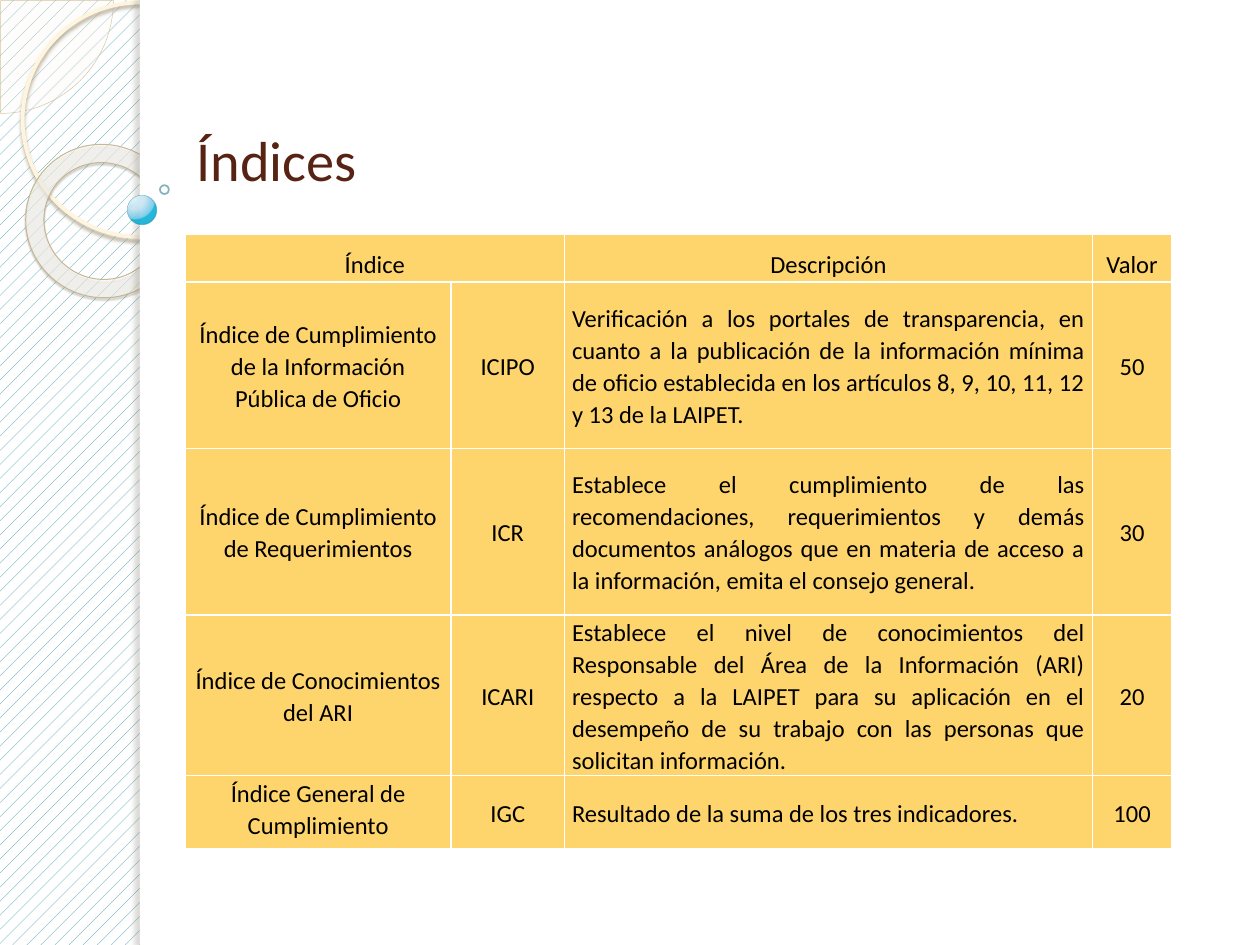
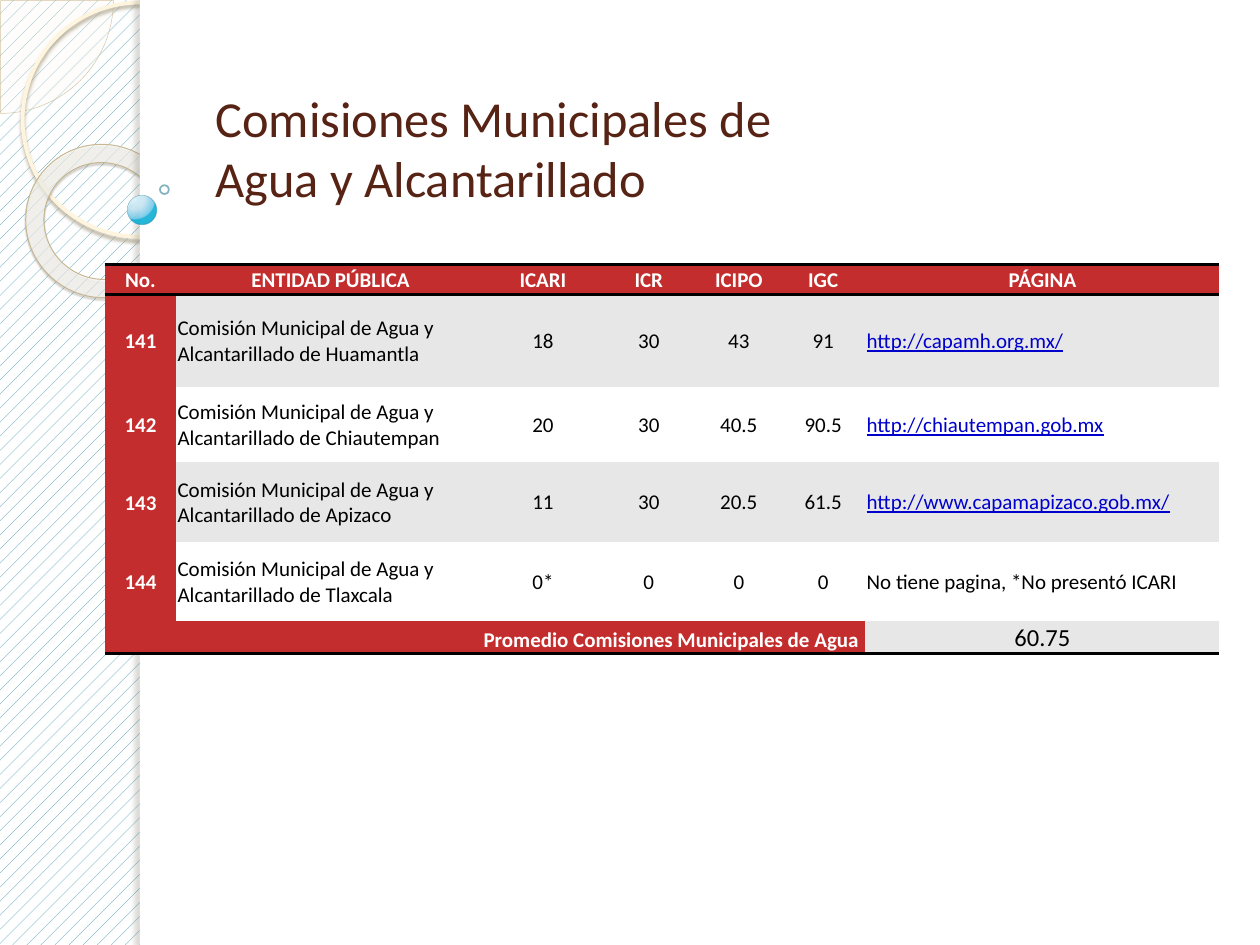
from lxml.etree import SubElement, Element
from pptx import Presentation
from pptx.dml.color import RGBColor
from pptx.enum.dml import MSO_PATTERN
from pptx.enum.shapes import MSO_SHAPE as SHAPE
from pptx.enum.text import MSO_ANCHOR as ANCHOR, MSO_AUTO_SIZE, PP_ALIGN as ALIGN
from pptx.oxml.ns import qn
from pptx.util import Inches, Pt

FONT = "Calibri"
C = {
    "white": "FFFFFF", "black": "000000", "title": "572314", "hatch": "3891A7",
    "gold": "FED46C", "red": "C32D2E", "grey": "E7E7E7", "link": "0000CC",
    "pie": "FEFAF4", "pie_line": "D3C39F", "ring": "FFF5DE", "ring_shadow": "B0A68F",
    "donut_line": "C7B893", "donut_shadow": "5A5444", "band_shadow": "736F63",
    "ball_line": "308EA5", "dot_line": "318093",
}
# Gradients: stops as (position, colour, opacity), then the focus rectangle, in percent
DONUT_GRAD = ([(0, "FFFCF6", 70), (70, "FFFEFB", 55), (100, "F0D28E", 60)],
              (-408, -50, 508, 150))
BALL_GRAD = ([(0, "DAF4FF", 95), (50, "C3E3F0", 90), (95, "6BC7E8", 88), (100, "00ABD5", 85)],
             (25, 12, 75, 88))
NO_STYLE = "{2D5ABB26-0587-4C30-8999-92F81FD0307C}"

INDEX_ROWS = [
    ("Índice", "", "Descripción", "Valor"),
    ("Índice de Cumplimiento de la Información Pública de Oficio", "ICIPO",
     "Verificación a los portales de transparencia, en cuanto a la publicación de la "
     "información mínima de oficio establecida en los artículos 8, 9, 10, 11, 12 y 13 "
     "de la LAIPET.", "50"),
    ("Índice de Cumplimiento de Requerimientos", "ICR",
     "Establece el cumplimiento de las recomendaciones, requerimientos y demás documentos "
     "análogos que en materia de acceso a la información, emita el consejo general.", "30"),
    ("Índice de Conocimientos del ARI", "ICARI",
     "Establece el nivel de conocimientos del Responsable del Área de la Información (ARI) "
     "respecto a la LAIPET para su aplicación en el desempeño de su trabajo con las "
     "personas que solicitan información.", "20"),
    ("Índice General de Cumplimiento", "IGC",
     "Resultado de la suma de los tres indicadores.", "100"),
]
SCORE_HEADS = ("No.", "ENTIDAD PÚBLICA", "ICARI", "ICR", "ICIPO", "IGC", "PÁGINA")
SCORES = [
    ("141", "Huamantla", "18", "30", "43", "91", "http://capamh.org.mx/"),
    ("142", "Chiautempan", "20", "30", "40.5", "90.5", "http://chiautempan.gob.mx"),
    ("143", "Apizaco", "11", "30", "20.5", "61.5", "http://www.capamapizaco.gob.mx/"),
    ("144", "Tlaxcala", "0*", "0", "0", "0", "No tiene pagina, *No presentó ICARI"),
]


def rgb(name):
    return RGBColor.from_string(C[name])


def apply(obj, fmt):
    for name, value in fmt.items():
        setattr(obj, name, value)


def add_color(parent, color, opacity=100):
    clr = SubElement(parent, qn("a:srgbClr"), val=color)
    SubElement(clr, qn("a:alpha"), val=str(opacity * 1000))


def set_gradient(s, stops, focus):
    grad = Element(qn("a:gradFill"), rotWithShape="1")
    gs_lst = SubElement(grad, qn("a:gsLst"))
    for pos, color, opacity in stops:
        add_color(SubElement(gs_lst, qn("a:gs"), pos=str(pos * 1000)), color, opacity)
    circle = SubElement(grad, qn("a:path"), path="circle")
    SubElement(circle, qn("a:fillToRect"),
               **{side: str(v * 1000) for side, v in zip("ltrb", focus)})
    sp_pr = s.element.spPr
    sp_pr.replace(sp_pr.find(qn("a:noFill")), grad)


def set_shadow(s, color, opacity, blur, dist, angle):
    effects = s.element.spPr.find(qn("a:effectLst"))
    shadow = SubElement(effects, qn("a:outerShdw"), blurRad=str(Pt(blur)), dist=str(Pt(dist)),
                        dir=str(angle * 60000), algn="tl", rotWithShape="0")
    add_color(shadow, C[color], opacity)


def set_opacity(part, opacity):
    for clr in part.iter(qn("a:srgbClr")):
        SubElement(clr, qn("a:alpha"), val=str(opacity * 1000))


def add_decor(slide, kind, box, fill=None, opacity=None, gradient=None,
              line=None, line_opacity=None, shadow=None):
    s = slide.shapes.add_shape(kind, *map(Inches, box))
    s.shadow.inherit = False
    if fill:
        s.fill.solid()
        s.fill.fore_color.rgb = rgb(fill)
    else:
        s.fill.background()
    if opacity:
        set_opacity(s.element.spPr.find(qn("a:solidFill")), opacity)
    if gradient:
        set_gradient(s, *gradient)
    if line:
        s.line.color.rgb = rgb(line[0])
        s.line.width = Pt(line[1])
    else:
        s.line.fill.background()
    if line_opacity:
        set_opacity(s.element.spPr.find(qn("a:ln")), line_opacity)
    if shadow:
        set_shadow(s, *shadow)
    return s


def build_master(prs, slide):
    """Draw the side decoration and move it to the master, behind its placeholders."""
    master = prs.slide_master
    fill = master.background.fill
    fill.patterned()
    fill.pattern = MSO_PATTERN.PERCENT_10
    fill.fore_color.rgb = rgb("hatch")
    fill.back_color.rgb = rgb("white")

    pie = add_decor(slide, SHAPE.PIE, (-0.89, -0.89, 1.79, 1.79), "pie", 33,
                    line=("pie_line", 0.25))
    pie.adjustments[0], pie.adjustments[1] = 0, 54
    ring = add_decor(slide, SHAPE.OVAL, (0.18, 0.02, 1.86, 1.86), line=("ring", 2.15),
                     shadow=("ring_shadow", 85, 2, 2, 90))
    donut = add_decor(slide, SHAPE.DONUT, (0.2, 1.15, 1.23, 1.21), gradient=DONUT_GRAD,
                      line=("donut_line", 0.58), shadow=("donut_shadow", 35, 1, 1.2, 75))
    donut.adjustments[0] = 0.12
    donut.rotation = 38.6
    page = add_decor(slide, SHAPE.RECTANGLE, (1.11, 0, 8.89, 7.5), "white")
    edge = add_decor(slide, SHAPE.RECTANGLE, (1.11, 0, 0.08, 7.5), "white",
                     shadow=("band_shadow", 25, 3, 3, 180))
    ball = add_decor(slide, SHAPE.OVAL, (1.01, 1.55, 0.23, 0.23), gradient=BALL_GRAD,
                     line=("ball_line", 0.16), line_opacity=60)
    dot = add_decor(slide, SHAPE.OVAL, (1.27, 1.47, 0.07, 0.07), line=("dot_line", 1),
                    line_opacity=60)
    tree = master.shapes.element
    for i, s in enumerate((pie, ring, donut, page, edge, ball, dot)):
        tree.insert(2 + i, s.element)


def write(p, text, size, color, **fmt):
    r = p.add_run()
    r.text = text
    apply(r.font, {"name": FONT, "size": Pt(size), **fmt})
    r.font.color.rgb = rgb(color)


def set_title(slide, text, box, size):
    s = slide.shapes.title
    apply(s, dict(zip(("left", "top", "width", "height"), map(Inches, box))))
    tf = s.text_frame
    apply(tf, {"word_wrap": True, "auto_size": MSO_AUTO_SIZE.NONE,
               "vertical_anchor": ANCHOR.BOTTOM})
    p = tf.paragraphs[0]
    p.alignment = ALIGN.LEFT
    write(p, text, size, "title")


def add_grid(slide, left, top, widths, heights):
    s = slide.shapes.add_table(len(heights), len(widths), Inches(left), Inches(top),
                               Inches(sum(widths)), Inches(sum(heights)))
    for style in s.element.iter(qn("a:tableStyleId")):
        style.text = NO_STYLE
    apply(s.table, {"first_row": False, "horz_banding": False})
    for col, width in zip(s.table.columns, widths):
        col.width = Inches(width)
    for row, height in zip(s.table.rows, heights):
        row.height = Inches(height)
    return s.table


def fill_cell(cell, text, fill, size, color, align=ALIGN.CENTER, anchor=ANCHOR.MIDDLE,
              spacing=1.07, side=0.05, top=0, borders="", border=None, **fmt):
    apply(cell, {"margin_left": Inches(side), "margin_right": Inches(side),
                 "margin_top": Inches(top), "margin_bottom": 0, "vertical_anchor": anchor})
    for edge in borders:
        ln = SubElement(cell._tc.tcPr, qn("a:ln" + edge), w=str(Pt(border[1])))
        add_color(SubElement(ln, qn("a:solidFill")), C[border[0]])
    cell.fill.solid()
    cell.fill.fore_color.rgb = rgb(fill)
    if text:
        p = cell.text_frame.paragraphs[0]
        apply(p, {"alignment": align, "line_spacing": spacing})
        write(p, text, size, color, **fmt)


def add_index_table(slide):
    table = add_grid(slide, 1.47, 1.86, (2.11, 0.9, 4.19, 0.63), (0.38, 1.32, 1.32, 1.06, 0.58))
    table.cell(0, 0).merge(table.cell(0, 1))
    last = len(INDEX_ROWS) - 1
    for i, row in enumerate(INDEX_ROWS):
        for j, text in enumerate(row):
            align = ALIGN.CENTER
            if j == 2 and i > 0:
                align = ALIGN.LEFT if i == last else ALIGN.JUSTIFY
            at_top = i == 0 or (i == last and j == 0)
            fill_cell(table.cell(i, j), text, "gold", 14, "black", align,
                      ANCHOR.TOP if at_top else ANCHOR.MIDDLE, 1.07 if i else 1.5,
                      side=0.06, top=0.01, borders="LRTB", border=("white", 1))


def add_score_table(slide):
    table = add_grid(slide, 0.83, 2.1, (0.57, 2.45, 0.92, 0.76, 0.67, 0.67, 2.81),
                     (0.24, 0.73, 0.6, 0.63, 0.63, 0.12))
    rule = {"border": ("black", 2)}
    tight = {"spacing": 1.0, "side": 0.01, "top": 0.01}
    # Heading row
    for j, text in enumerate(SCORE_HEADS):
        fill_cell(table.cell(0, j), text, "red", 12, "white", bold=True, borders="TB",
                  **rule, **(tight if j > 1 else {}))
    # One row per public body
    for i, (number, town, *values, page) in enumerate(SCORES, 1):
        fill = "grey" if i % 2 else "white"
        fill_cell(table.cell(i, 0), number, "red", 12, "white", bold=True)
        fill_cell(table.cell(i, 1), f"Comisión Municipal de Agua y Alcantarillado de {town}",
                  fill, 12, "black", ALIGN.LEFT, **tight)
        for j, value in enumerate(values, 2):
            fill_cell(table.cell(i, j), value, fill, 12, "black", **tight)
        is_url = page.startswith("http")
        fill_cell(table.cell(i, 6), page, fill, 12, "link" if is_url else "black",
                  ALIGN.LEFT, underline=is_url, **tight)
    # Average row
    table.cell(5, 0).merge(table.cell(5, 5))
    for j in range(6):
        text = "" if j else "Promedio Comisiones Municipales de Agua"
        fill_cell(table.cell(5, j), text, "red", 12, "white", ALIGN.RIGHT, ANCHOR.BOTTOM,
                  bold=True, borders="B", **rule)
    fill_cell(table.cell(5, 6), "60.75", "grey", 14, "black", anchor=ANCHOR.BOTTOM,
              borders="B", **rule)


def main():
    prs = Presentation()
    prs.slide_width, prs.slide_height = Inches(10), Inches(7.5)
    title_only = prs.slide_layouts[5]

    # Indices
    slide = prs.slides.add_slide(title_only)
    build_master(prs, slide)
    set_title(slide, "Índices", (1.46, 1.03, 7.05, 0.55), 32.2)
    add_index_table(slide)

    # Municipal water commissions
    slide = prs.slides.add_slide(title_only)
    set_title(slide, "Comisiones Municipales de Agua y Alcantarillado",
              (1.61, 0.76, 5.28, 0.94), 28.8)
    add_score_table(slide)

    prs.save("out.pptx")


if __name__ == "__main__":
    main()
